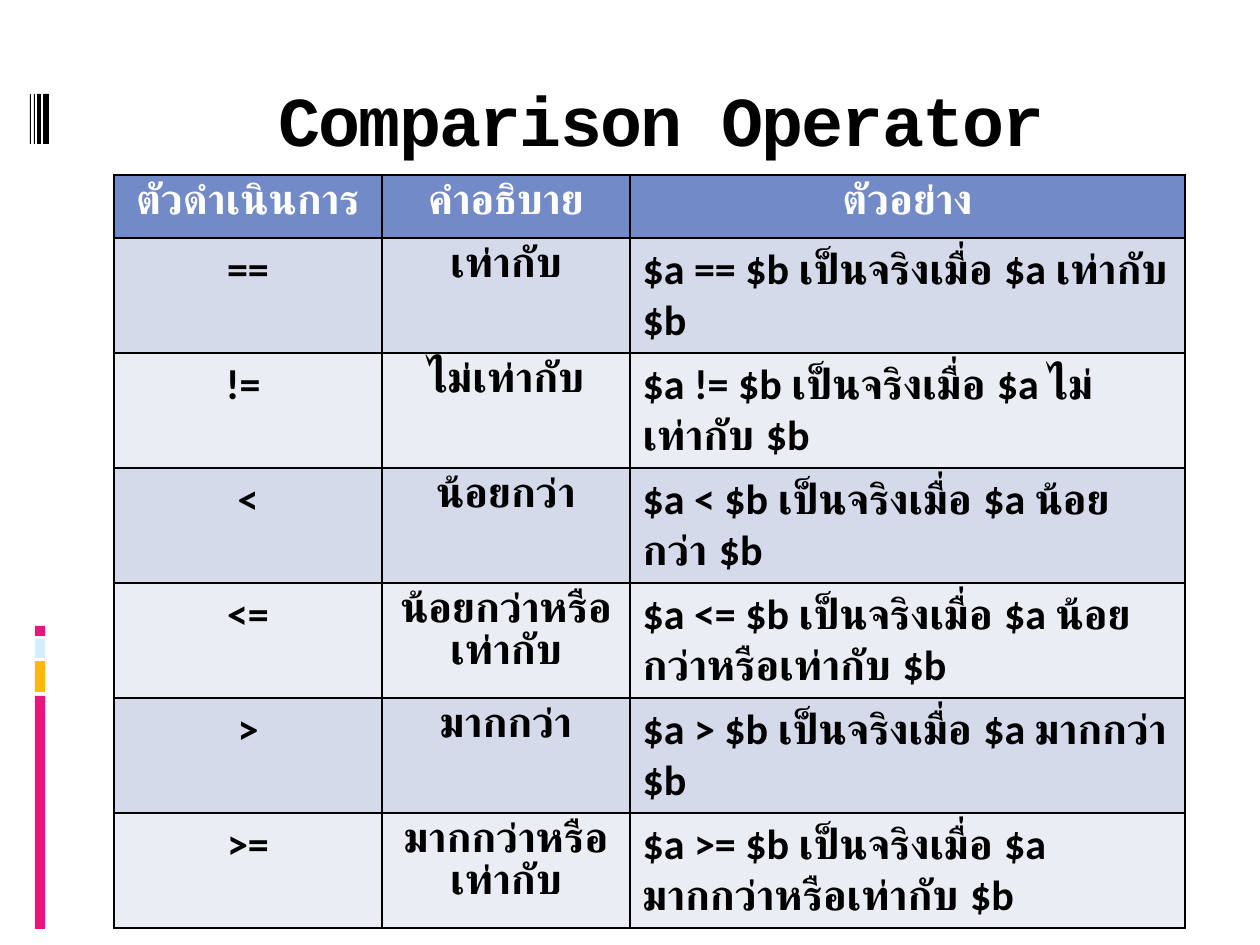
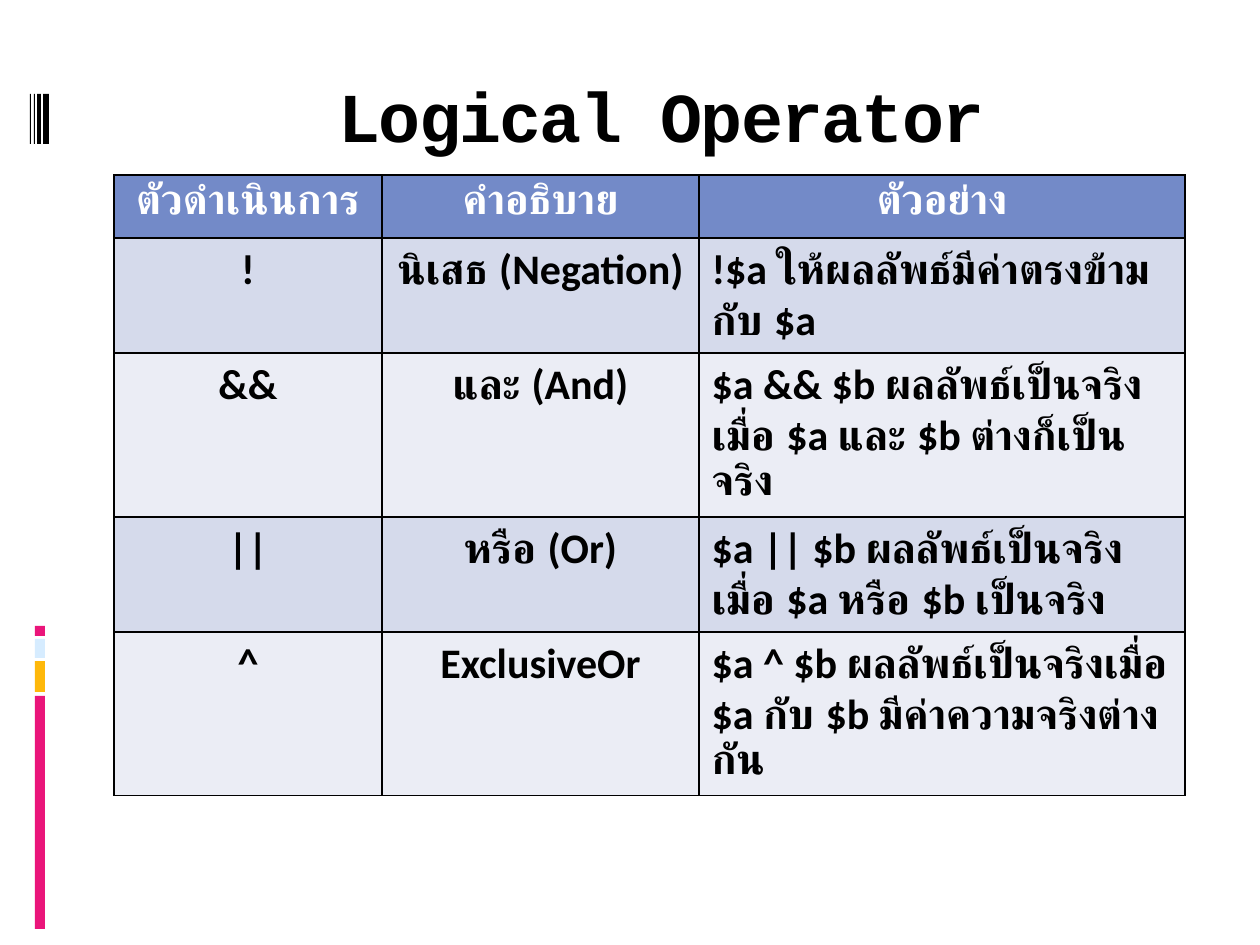
from lxml.etree import SubElement
from pptx import Presentation
from pptx.dml.color import RGBColor
from pptx.enum.shapes import MSO_SHAPE
from pptx.enum.text import MSO_ANCHOR, PP_ALIGN
from pptx.oxml.ns import qn
from pptx.util import Emu, Pt

BLACK = RGBColor(0x00, 0x00, 0x00)
WHITE = RGBColor(0xFF, 0xFF, 0xFF)
PINK = RGBColor(0xEA, 0x15, 0x7A)
AMBER = RGBColor(0xFE, 0xB8, 0x0A)
PALE_BLUE = RGBColor(0xD6, 0xEC, 0xFF)
HEADER_BLUE = RGBColor(0x73, 0x8A, 0xC8)
ROW_TINTS = RGBColor(0xD5, 0xDA, 0xEB), RGBColor(0xEB, 0xED, 0xF5)

HEADINGS = ("ตัวดำเนินการ", "คำอธิบาย", "ตัวอย่าง")
OPERATOR_SLIDES = [
    {
        "title": "Comparison Operator",
        "title_top": 70,
        "columns": (268, 248, 555),
        "heights": (55, 115, 115, 115, 115, 115, 115),
        "operators": [
            ("==", "เท่ากับ", "$a == $b เป็นจริงเมื่อ $a เท่ากับ $b"),
            ("!= ", "ไม่เท่ากับ", "$a != $b เป็นจริงเมื่อ $a ไม่เท่ากับ $b"),
            ("<", "น้อยกว่า", "$a < $b เป็นจริงเมื่อ $a น้อยกว่า $b"),
            ("<=", "น้อยกว่าหรือเท่ากับ", "$a <= $b เป็นจริงเมื่อ $a น้อยกว่าหรือเท่ากับ $b"),
            (">", "มากกว่า", "$a > $b เป็นจริงเมื่อ $a มากกว่า $b"),
            (">=", "มากกว่าหรือเท่ากับ", "$a >= $b เป็นจริงเมื่อ $a มากกว่าหรือเท่ากับ $b"),
        ],
    },
    {
        "title": "Logical Operator",
        "title_top": 66,
        "columns": (268, 317, 486),
        "heights": (55, 115, 157, 115, 157),
        "operators": [
            ("!", "นิเสธ (Negation)", "!$a ให้ผลลัพธ์มีค่าตรงข้ามกับ $a"),
            ("&&", "และ (And)", "$a && $b ผลลัพธ์เป็นจริงเมื่อ $a และ $b ต่างก็เป็นจริง"),
            ("||", "หรือ (Or)", "$a || $b ผลลัพธ์เป็นจริงเมื่อ $a หรือ $b เป็นจริง"),
            ("^", "ExclusiveOr", "$a ^ $b ผลลัพธ์เป็นจริงเมื่อ $a กับ $b มีค่าความจริงต่างกัน"),
        ],
    },
]

SIDE_BLOCKS = [(696, 233, PINK), (661, 31, AMBER), (639, 19, PALE_BLUE), (626, 10, PINK)]
BARCODE_BARS = [(43, 6), (37, 4), (34, 1), (30, 1)]
TITLE_FORMAT = {"name": "Courier New", "size": Pt(40), "bold": True}
CELL_FORMAT = {"name": "Calibri", "size": Pt(24), "bold": True}
BORDER_SIDES = ("a:lnL", "a:lnR", "a:lnT", "a:lnB")


def px(length):
    return Emu(round(length * 914400 / 126))


def box(*lengths):
    return [px(length) for length in lengths]


def write(frame, text, formats, color, align):
    paragraph = frame.paragraphs[0]
    paragraph.alignment = align
    run = paragraph.add_run()
    run.text = text
    for attribute, value in formats.items():
        setattr(run.font, attribute, value)
    run.font.color.rgb = color
    return run


def add_block(slide, bounds, color):
    block = slide.shapes.add_shape(MSO_SHAPE.RECTANGLE, *box(*bounds))
    block.shadow.inherit = False
    block.fill.solid()
    block.fill.fore_color.rgb = color
    block.line.fill.background()


def add_decoration(slide):
    for top, height, color in SIDE_BLOCKS:
        add_block(slide, (35, top, 10, height), color)
    for left, width in BARCODE_BARS:
        add_block(slide, (left, 94, width, 50), BLACK)


def add_title(slide, text, top):
    frame = slide.shapes.add_textbox(*box(126, top, 1071, 126)).text_frame
    frame.word_wrap = True
    frame.vertical_anchor = MSO_ANCHOR.MIDDLE
    frame.margin_bottom = px(24)
    run = write(frame, text, TITLE_FORMAT, BLACK, PP_ALIGN.CENTER)
    run.font._element.set("spc", "-100")
    frame.paragraphs[0].line_spacing = 0.9


def add_borders(cell):
    properties = cell._tc.get_or_add_tcPr()
    for position, side in enumerate(BORDER_SIDES):
        line = properties.makeelement(qn(side), {"w": str(Pt(1))})
        fill = SubElement(line, qn("a:solidFill"))
        SubElement(fill, qn("a:srgbClr"), val=str(BLACK))
        properties.insert(position, line)


def add_operator_table(slide, columns, heights, operators):
    rows = [HEADINGS, *operators]
    bounds = box(114, 175, sum(columns), sum(heights))
    table = slide.shapes.add_table(len(rows), len(columns), *bounds).table
    for column, width in zip(table.columns, columns):
        column.width = px(width)
    for row, height in zip(table.rows, heights):
        row.height = px(height)
    for row_index, texts in enumerate(rows):
        is_header = row_index == 0
        for column_index, text in enumerate(texts):
            cell = table.cell(row_index, column_index)
            cell.fill.solid()
            cell.fill.fore_color.rgb = HEADER_BLUE if is_header else ROW_TINTS[(row_index - 1) % 2]
            centred = is_header or column_index < 2
            write(cell.text_frame, text, CELL_FORMAT, WHITE if is_header else BLACK,
                  PP_ALIGN.CENTER if centred else PP_ALIGN.LEFT)
            SubElement(cell.text_frame.paragraphs[0]._p, qn("a:endParaRPr"), sz="1800")
            add_borders(cell)


def main():
    deck = Presentation()
    deck.slide_width, deck.slide_height = box(1260, 945)
    for content in OPERATOR_SLIDES:
        slide = deck.slides.add_slide(deck.slide_layouts[6])
        add_decoration(slide)
        add_title(slide, content["title"], content["title_top"])
        add_operator_table(slide, content["columns"], content["heights"], content["operators"])
    deck.save("out.pptx")


if __name__ == "__main__":
    main()
